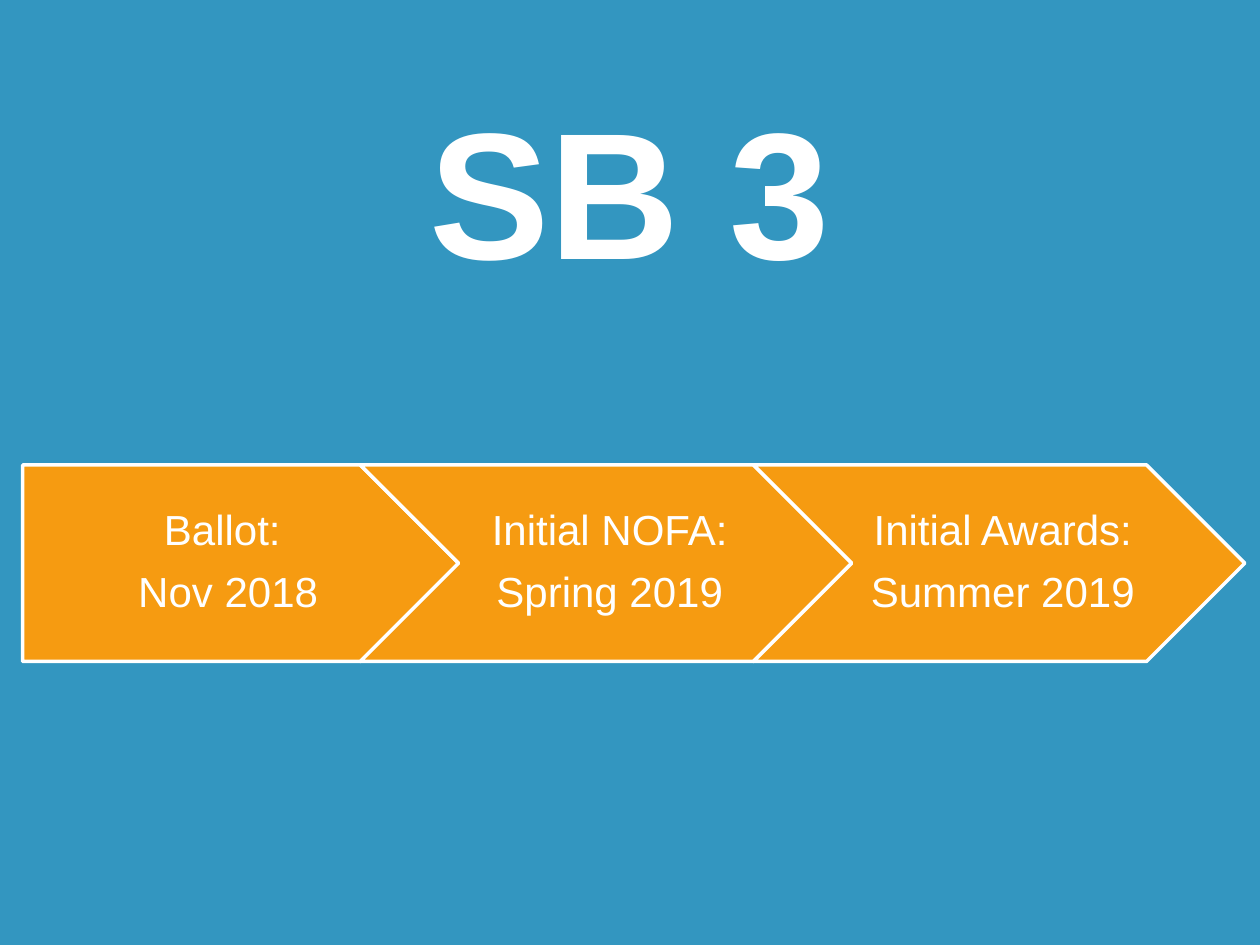
from pptx import Presentation, util as u
from pptx.dml.color import RGBColor
from pptx.enum import shapes, text

COLORS = {"background": "3396C0", "step": "F69B11", "light": "FFFFFF"}
WIDTH, HEIGHT = 10, 7.5
MILESTONES = [
    ("Ballot:", " Nov 2018"),
    ("Initial NOFA:", "Spring 2019"),
    ("Initial Awards:", "Summer 2019"),
]


def rgb(name):
    """Return the named colour."""
    return RGBColor.from_string(COLORS[name])


def add_text(slide, box, lines, size, bold=False, anchor=text.MSO_ANCHOR.MIDDLE,
             insets=(0, 0, 0, 0), spacing=1, after=0):
    """Place centred lines of text in a box, with insets left, top, right, bottom."""
    frame = slide.shapes.add_textbox(*map(u.Inches, box)).text_frame
    frame.word_wrap = True
    frame.vertical_anchor = anchor
    (frame.margin_left, frame.margin_top,
     frame.margin_right, frame.margin_bottom) = map(u.Inches, insets)
    for index, line in enumerate(lines):
        paragraph = frame.add_paragraph() if index else frame.paragraphs[0]
        paragraph.alignment = text.PP_ALIGN.CENTER
        paragraph.line_spacing = spacing
        paragraph.space_after = u.Pt(after)
        run = paragraph.add_run()
        run.text = line
        run.font.name = "Arial"
        run.font.size = u.Pt(size)
        run.font.bold = bold
        run.font.color.rgb = rgb("light")


def add_arrow(slide, kind, box):
    """Draw one outlined step of the timeline."""
    arrow = slide.shapes.add_shape(kind, *map(u.Inches, box))
    arrow.shadow.inherit = False
    arrow.fill.solid()
    arrow.fill.fore_color.rgb = rgb("step")
    arrow.line.color.rgb = rgb("light")
    arrow.line.width = u.Pt(2)


def add_timeline(slide, box, milestones):
    """Fill the box with a pentagon and interlocking chevrons."""
    left, top, width, height = box
    head, pitch = height / 2, height * 2
    first_width = width - pitch * (len(milestones) - 1)
    for index, lines in enumerate(milestones):
        if index:
            kind = shapes.MSO_SHAPE.CHEVRON
            step_left = left + first_width - head + pitch * (index - 1)
            step_width = pitch + head
            label_left, label_width = step_left + head, pitch - head
            inset = 0.1
        else:
            kind = shapes.MSO_SHAPE.PENTAGON
            step_left, step_width = left, first_width
            label_left, label_width = left, first_width - head / 2
            inset = 0.14
        add_arrow(slide, kind, (step_left, top, step_width, height))
        add_text(slide, (label_left, top, label_width, height), lines, 24,
                 insets=(inset, 0.07, 0.04, 0.07), spacing=0.9, after=9.5)


def add_title(slide, box, title):
    """Place the large bold title."""
    add_text(slide, box, [title], 103, bold=True,
             anchor=text.MSO_ANCHOR.TOP, insets=(0, 0.13, 0, 0))


def main():
    """Build and save the slide."""
    deck = Presentation()
    deck.slide_width, deck.slide_height = u.Inches(WIDTH), u.Inches(HEIGHT)
    slide = deck.slides.add_slide(deck.slide_layouts[6])
    slide.background.fill.solid()
    slide.background.fill.fore_color.rgb = rgb("background")
    add_title(slide, (0.34, 0.5, 9.31, 1.83), "SB 3")
    add_timeline(slide, (0.18, 3.69, 9.7, 1.56), MILESTONES)
    deck.save("out.pptx")


if __name__ == "__main__":
    main()
